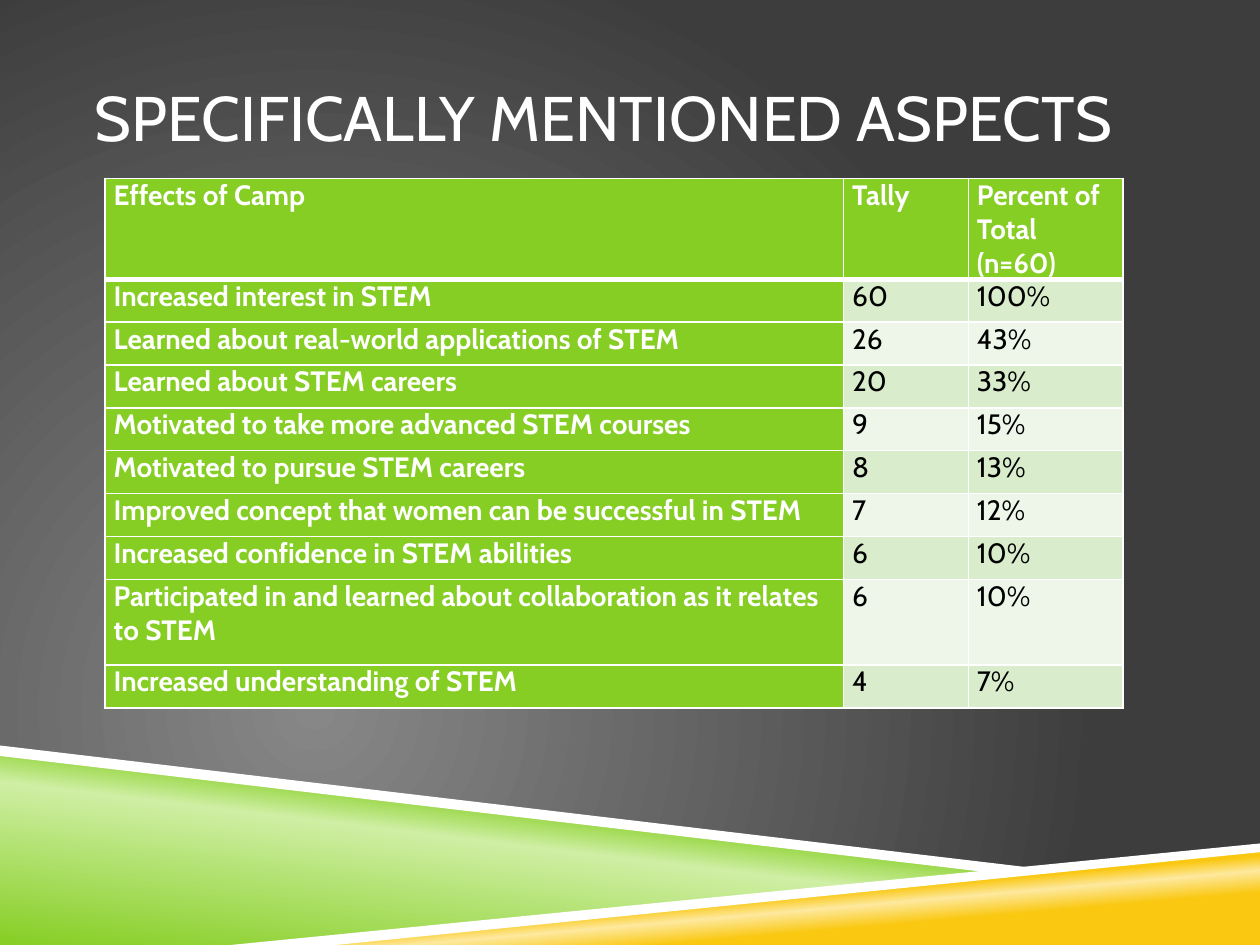
from typing import NamedTuple

from lxml.etree import SubElement
from pptx import Presentation
from pptx.dml.color import RGBColor
from pptx.enum.text import MSO_ANCHOR
from pptx.oxml.ns import qn
from pptx.util import Pt

WHITE = RGBColor(0xFF, 0xFF, 0xFF)
BLACK = RGBColor(0, 0, 0)
GREEN = RGBColor(0x86, 0xCE, 0x24)
LIGHT_GREEN = RGBColor(0xCF, 0xEF, 0xA4)
YELLOW = RGBColor(0xFA, 0xC8, 0x10)
LIGHT_YELLOW = RGBColor(0xFD, 0xE9, 0x9F)
GREY = RGBColor(0x87, 0x87, 0x87)
DARK_GREY = RGBColor(0x3D, 0x3D, 0x3D)
BANDS = (RGBColor(0xD9, 0xED, 0xCD), RGBColor(0xED, 0xF6, 0xE8))
FONT = "Cabin"


class Stop(NamedTuple):
    percent: int
    color: RGBColor


class Band(NamedTuple):
    points: list[tuple[float, float]]
    stops: list[Stop]
    angle: int = 0


class Effect(NamedTuple):
    name: str
    tally: str
    percent: str
    height: float = 24.5


BAND_SHAPES = [
    Band([(0, 429.8), (570.2, 498.2), (144, 540), (0, 540)],
         [Stop(0, GREEN), Stop(52, LIGHT_GREEN), Stop(66, GREEN)], 277),
    Band([(142.5, 540), (720, 483.8), (720, 540)],
         [Stop(28, YELLOW), Stop(40, LIGHT_YELLOW), Stop(48, YELLOW)], 265),
    Band([(0, 426.2), (0, 432), (568.8, 499), (599, 496.8)], [Stop(0, WHITE)]),
    Band([(720, 481.7), (132.5, 540), (191.5, 540), (720, 487.4)], [Stop(0, WHITE)]),
]

COLUMN_WIDTHS = (422, 71.3, 88.5)
EFFECTS = [
    Effect("Effects of Camp", "Tally", "Percent of Total (n=60)", 49),
    Effect("Increased interest in STEM", "60", "100%"),
    Effect("Learned about real-world applications of STEM", "26", "43%"),
    Effect("Learned about STEM careers", "20", "33%"),
    Effect("Motivated to take more advanced STEM courses", "9", "15%"),
    Effect("Motivated to pursue STEM careers", "8", "13%"),
    Effect("Improved concept that women can be successful in STEM", "7", "12%"),
    Effect("Increased confidence in STEM abilities", "6", "10%"),
    Effect("Participated in and learned about collaboration as it relates to STEM",
           "6", "10%", 49),
    Effect("Increased understanding of STEM", "4", "7%"),
]


def write_text(frame, text: str, *, size: float, color: RGBColor, bold: bool = False) -> None:
    span = frame.paragraphs[0].add_run()
    span.text = text
    span.font.name = FONT
    span.font.size = Pt(size)
    span.font.bold = bold
    span.font.color.rgb = color


def set_stops(gradient, stops: list[Stop]) -> None:
    for child in list(gradient):
        gradient.remove(child)
    stop_list = SubElement(gradient, qn("a:gsLst"))
    for stop in stops:
        entry = SubElement(stop_list, qn("a:gs"), pos=str(stop.percent * 1000))
        SubElement(entry, qn("a:srgbClr"), val=str(stop.color))


def paint_background(page) -> None:
    page.background.fill.gradient()
    gradient = page.element.find(".//" + qn("a:gradFill"))
    set_stops(gradient, [Stop(0, GREY), Stop(100, DARK_GREY)])
    circle = SubElement(gradient, qn("a:path"), path="circle")
    SubElement(circle, qn("a:fillToRect"), l="50000", t="100000", r="100000", b="50000")


def draw_band(page, band: Band) -> None:
    builder = page.shapes.build_freeform(*band.points[0], scale=Pt(1))
    builder.add_line_segments(band.points[1:], close=True)
    shape = builder.convert_to_shape()
    shape.shadow.inherit = False
    shape.line.fill.background()
    if len(band.stops) == 1:
        shape.fill.solid()
        shape.fill.fore_color.rgb = band.stops[0].color
    else:
        shape.fill.gradient()
        gradient = shape.element.spPr.find(qn("a:gradFill"))
        set_stops(gradient, band.stops)
        SubElement(gradient, qn("a:lin"), ang=str(band.angle * 60000), scaled="0")


def draw_title(page, text: str) -> None:
    box = page.shapes.add_textbox(Pt(54), Pt(21.6), Pt(612), Pt(90))
    frame = box.text_frame
    frame.word_wrap = True
    frame.vertical_anchor = MSO_ANCHOR.MIDDLE
    frame.margin_left = frame.margin_right = 0
    write_text(frame, text, size=36, color=WHITE)


def set_borders(cell, bottom_width: float) -> None:
    properties = cell._tc.get_or_add_tcPr()
    widths = {"a:lnL": 1, "a:lnR": 1, "a:lnT": 1, "a:lnB": bottom_width}
    for index, (tag, width) in enumerate(widths.items()):
        line = SubElement(properties, qn(tag), w=str(Pt(width)))
        solid = SubElement(line, qn("a:solidFill"))
        SubElement(solid, qn("a:srgbClr"), val=str(WHITE))
        properties.insert(index, line)


def draw_table(page, effects: list[Effect]) -> None:
    total_height = sum(effect.height for effect in effects)
    table = page.shapes.add_table(
        len(effects), len(COLUMN_WIDTHS), Pt(60), Pt(102),
        Pt(sum(COLUMN_WIDTHS)), Pt(total_height)).table
    for column, width in zip(table.columns, COLUMN_WIDTHS):
        column.width = Pt(width)
    for row_index, effect in enumerate(effects):
        table.rows[row_index].height = Pt(effect.height)
        for column_index, text in enumerate(effect[:3]):
            cell = table.cell(row_index, column_index)
            heading = row_index == 0 or column_index == 0
            cell.margin_left = cell.margin_right = Pt(5)
            cell.margin_top = cell.margin_bottom = 0
            cell.fill.solid()
            cell.fill.fore_color.rgb = GREEN if heading else BANDS[(row_index - 1) % 2]
            set_borders(cell, 3 if row_index == 0 else 1)
            write_text(cell.text_frame, text, size=16,
                       color=WHITE if heading else BLACK, bold=heading)


def main() -> None:
    deck = Presentation()
    deck.slide_width, deck.slide_height = Pt(720), Pt(540)
    page = deck.slides.add_slide(deck.slide_layouts[6])
    paint_background(page)
    for band in BAND_SHAPES:
        draw_band(page, band)
    draw_title(page, "SPECIFICALLY MENTIONED ASPECTS")
    draw_table(page, EFFECTS)
    deck.save("out.pptx")


if __name__ == "__main__":
    main()
